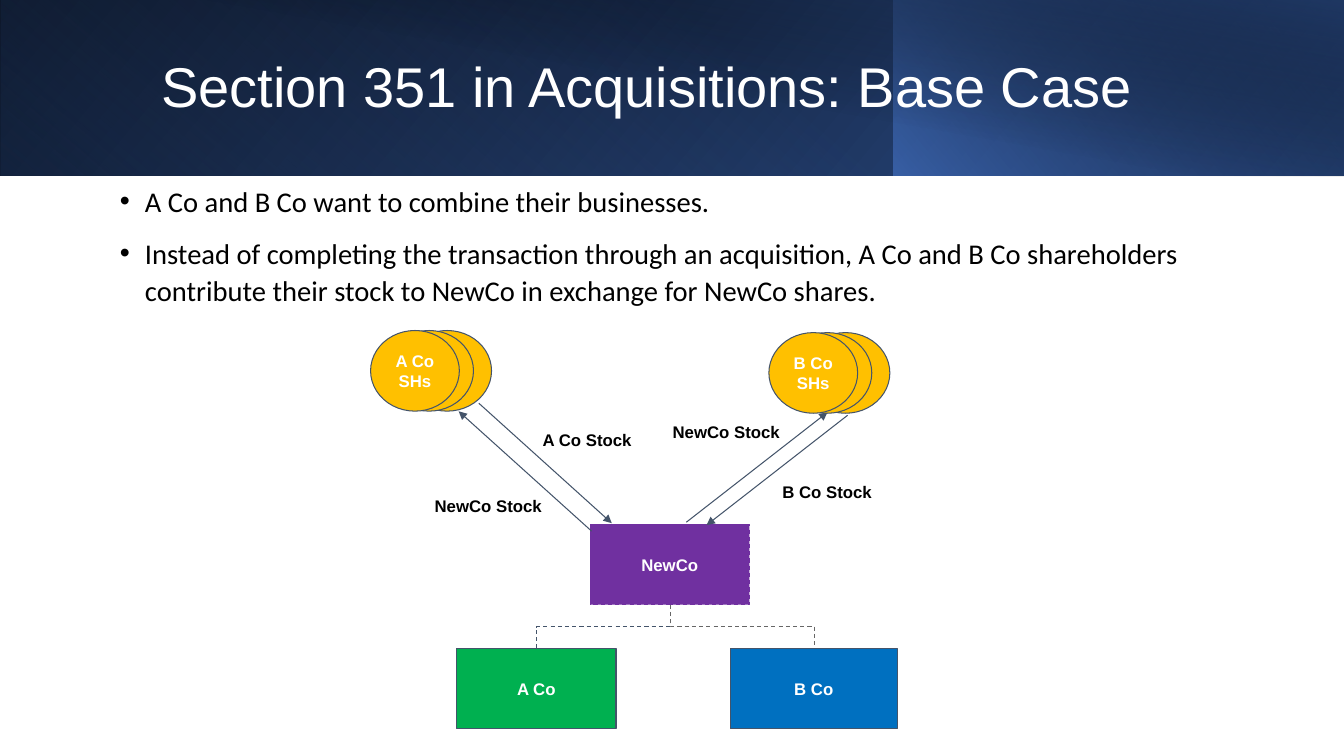
from lxml.etree import SubElement as Sub
from pptx import Presentation as Deck
from pptx.dml.color import RGBColor as Rgb
from pptx.enum.dml import MSO_LINE as Dash
from pptx.enum.shapes import MSO_CONNECTOR as Wire, MSO_SHAPE as Form
from pptx.enum.text import MSO_ANCHOR as Anchor, PP_ALIGN as Align
from pptx.oxml.ns import qn
from pptx.util import Pt

COLORS = {
    "black": "000000", "white": "FFFFFF", "navy": "1F3864", "royal": "2F5496",
    "blue": "4472C4", "slate": "44546A", "gray": "666666", "green": "00B050",
    "purple": "7030A0", "azure": "0070C0", "gold": "FFC000",
}


def tint(name):
    return Rgb.from_string(COLORS[name])


class Painter:
    font = "Arial"
    small = 12
    stroke = 0.75

    def __init__(self, slide):
        self.slide = slide
        self.shapes = slide.shapes

    def letter(self, shape, text, size, color, bold=False, font=None, pad=7.2, align=None, anchor=Anchor.TOP):
        frame = shape.text_frame
        frame.word_wrap = True
        frame.vertical_anchor = anchor
        frame.margin_left = frame.margin_right = Pt(7.2)
        frame.margin_top = frame.margin_bottom = Pt(pad)
        frame.text = text
        for para in frame.paragraphs:
            para.alignment = align
            for run in para.runs:
                run.font.name = font or self.font
                run.font.size = Pt(size)
                run.font.bold = bold
                run.font.color.rgb = tint(color)
        return frame

    def trace(self, line, color, dashed=False):
        line.color.rgb = tint(color)
        line.width = Pt(self.stroke)
        if dashed:
            line.dash_style = Dash.DASH

    def band(self, left, width, height, angle, stops, flip=True, turn=0):
        shape = self.shapes.add_shape(Form.RECTANGLE, Pt(left), 0, Pt(width), Pt(height))
        shape.shadow.inherit = False
        shape.line.fill.background()
        shape.rotation = turn
        props = shape._element.spPr
        if flip:
            props.find(qn("a:xfrm")).set("flipH", "1")
        shape.fill.background()
        blank = props.find(qn("a:noFill"))
        grad = Sub(props, qn("a:gradFill"), rotWithShape="1")
        props.replace(blank, grad)
        items = Sub(grad, qn("a:gsLst"))
        for place, color, alpha in stops:
            stop = Sub(items, qn("a:gs"), pos=str(place * 1000))
            shade = Sub(stop, qn("a:srgbClr"), val=COLORS[color])
            Sub(shade, qn("a:alpha"), val=str(alpha * 1000))
        Sub(grad, qn("a:lin"), ang=str(angle * 60000), scaled="0")

    def node(self, form, area, fill, text="", edge="slate", dashed=False, group=None):
        shapes = group.shapes if group else self.shapes
        shape = shapes.add_shape(form, *map(Pt, area))
        shape.shadow.inherit = False
        shape.fill.solid()
        shape.fill.fore_color.rgb = tint(fill)
        self.trace(shape.line, edge, dashed)
        if text:
            self.letter(shape, text, self.small, "white", True, align=Align.CENTER, anchor=Anchor.MIDDLE)

    def stack(self, left, top, text):
        group = self.shapes.add_group_shape()
        for shift, words in ((23, ""), (10.1, ""), (0, text)):
            area = (left + shift, top, 63.4, 57.6)
            self.node(Form.FLOWCHART_CONNECTOR, area, "gold", words, group=group)

    def title(self, area, text):
        box = self.shapes.add_textbox(*map(Pt, area))
        frame = self.letter(box, text, 40, "white", pad=3.6, anchor=Anchor.MIDDLE)
        frame.paragraphs[0].line_spacing = 0.9

    def label(self, left, top, text):
        box = self.shapes.add_textbox(Pt(left), Pt(top), Pt(104.4), Pt(21.6))
        self.letter(box, text, self.small, "black", True, align=Align.CENTER)

    def points(self, area, lines):
        box = self.shapes.add_textbox(*map(Pt, area))
        frame = self.letter(box, "\n".join(lines), 20.4, "black", font="Calibri", pad=3.6)
        for rank, para in enumerate(frame.paragraphs):
            para.line_spacing = 1.1
            para.space_before = Pt(10 if rank else 0)
            props = para._p.get_or_add_pPr()
            props.set("marL", str(Pt(18)))
            props.set("indent", str(Pt(-18)))
            Sub(Sub(props, qn("a:buClr")), qn("a:srgbClr"), val=COLORS["black"])
            Sub(props, qn("a:buFont"), typeface="Arial")
            Sub(props, qn("a:buChar"), char="•")

    def link(self, kind, ends, color, dashed=False):
        wire = self.shapes.add_connector(kind, *map(Pt, ends))
        self.trace(wire.line, color, dashed)
        props = wire._element.spPr
        Sub(props, qn("a:effectLst"))
        return props

    def arrow(self, *ends):
        props = self.link(Wire.STRAIGHT, ends, "slate")
        Sub(props.find(qn("a:ln")), qn("a:tailEnd"), type="triangle")

    def elbow(self, x1, y1, x2, y2, color):
        midx, midy = (x1 + x2) / 2, (y1 + y2) / 2
        halfx, halfy = (x2 - x1) / 2, (y2 - y1) / 2
        ends = (midx + halfy, midy - halfx, midx - halfy, midy + halfx)
        props = self.link(Wire.ELBOW, ends, color, True)
        props.find(qn("a:xfrm")).set("rot", str(270 * 60000))


def main():
    deck = Deck()
    deck.slide_width, deck.slide_height = Pt(960), Pt(540)
    art = Painter(deck.slides.add_slide(deck.slide_layouts[6]))

    art.band(0, 960, 125.3, 140, [(0, "black", 100), (100, "royal", 100)])
    art.band(0, 639.4, 125.3, 230, [(0, "blue", 0), (20, "blue", 0), (100, "navy", 55)], turn=180)
    art.band(638.6, 321.4, 125.3, 220, [(0, "blue", 66), (100, "black", 30)])
    art.band(36, 924, 126, 280, [(0, "black", 0), (50, "black", 0), (99, "navy", 52), (100, "navy", 52)], flip=False)
    art.title((108, 23, 779, 81.4), "Section 351 in Acquisitions: Base Case")

    art.node(Form.RECTANGLE, (326.2, 463, 113.8, 57.6), "green", "A Co")
    art.node(Form.RECTANGLE, (421.5, 374.4, 113.8, 57.6), "purple", "NewCo", "purple", True)
    art.node(Form.RECTANGLE, (521.8, 463, 119, 57.6), "azure", "B Co")
    art.elbow(383, 463, 478.8, 432, "slate")
    art.elbow(478.8, 432, 581.8, 463, "gray")

    for ends in (
        (342, 288, 437, 373.7),
        (422.6, 379.4, 327.6, 293.8),
        (605.5, 296.6, 504.7, 375.1),
        (490.3, 373, 591.1, 294.5),
    ):
        art.arrow(*ends)
    for left, top, text in (
        (367.2, 299.5, "A Co Stock"),
        (296.6, 347, "NewCo Stock"),
        (538.6, 337, "B Co Stock"),
        (466.6, 293.8, "NewCo Stock"),
    ):
        art.label(left, top, text)

    art.points((78.5, 125.3, 845.3, 101.5), (
        "A Co and B Co want to combine their businesses.",
        "Instead of completing the transaction through an acquisition, A Co and B Co shareholders "
        "contribute their stock to NewCo in exchange for NewCo shares.",
    ))
    art.stack(264.7, 236.1, "A Co SHs")
    art.stack(549.2, 237.6, "B Co SHs")
    deck.save("out.pptx")


if __name__ == "__main__":
    main()
